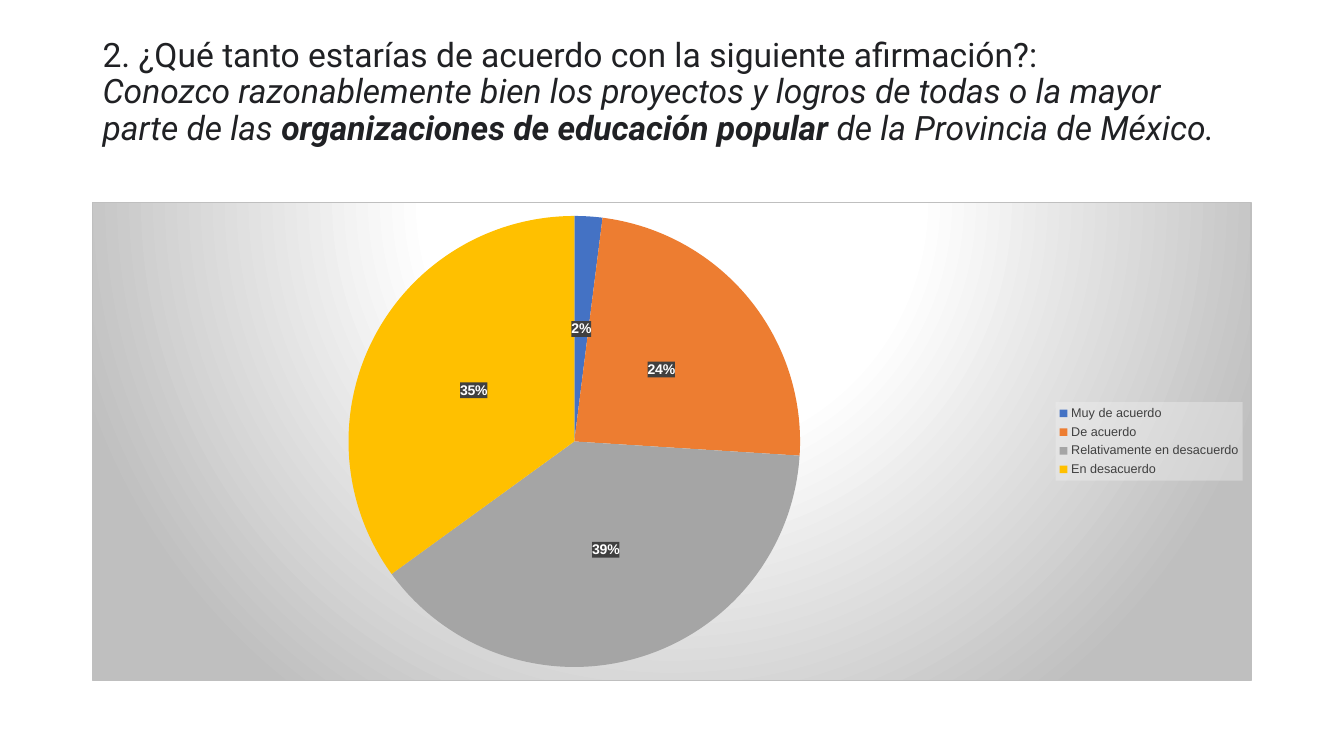
from copy import deepcopy

from lxml.etree import SubElement
from pptx import Presentation
from pptx.chart.data import CategoryChartData
from pptx.dml.color import RGBColor as Rgb
from pptx.enum.chart import XL_CHART_TYPE as ChartType
from pptx.enum.chart import XL_LABEL_POSITION as LabelPosition
from pptx.enum.chart import XL_LEGEND_POSITION as LegendPosition
from pptx.enum.text import MSO_ANCHOR as Anchor
from pptx.enum.text import PP_ALIGN as Align
from pptx.oxml import parse_xml
from pptx.oxml.ns import nsdecls, qn
from pptx.util import Cm, Pt

COLORS = {
    "title": "202124",
    "text": "000000",
    "legend": "404040",
    "legend_back": "F2F2F2",
    "label": "FFFFFF",
    "label_back": "404040",
    "center": "FFFFFF",
    "edge": "BFBFBF",
}
ANSWERS = {
    "Muy de acuerdo": (2, "4472C4"),
    "De acuerdo": (24, "ED7D31"),
    "Relativamente en desacuerdo": (39, "A5A5A5"),
    "En desacuerdo": (35, "FFC000"),
}
QUESTION = [
    ("2. ¿Qué tanto estarías de acuerdo con la siguiente afirmación?: ", {}, True),
    ("Conozco razonablemente bien los proyectos y logros de todas o la mayor "
     "parte de las ", {"italic": True}, False),
    ("organizaciones de educación popular", {"italic": True, "bold": True}, False),
    (" de la Provincia de México. ", {"italic": True}, True),
]


def apply(target, values):
    for name, value in values.items():
        setattr(target, name, value)


class SurveySlide:
    """Holds the style and the current slide, and adds its elements."""

    def __init__(self, deck):
        self.slide = deck.slides.add_slide(deck.slide_layouts[5])
        self.title_font = {"size": Pt(24), "name": "Roboto"}
        self.chart_font = {"size": Pt(10), "name": "Arial"}

    def style_font(self, font, color, values):
        apply(font, values)
        font.color.rgb = Rgb.from_string(COLORS[color])

    def add_question(self, parts, left, top, width, height):
        title = self.slide.shapes.title
        apply(title, {"left": left, "top": top, "width": width, "height": height})
        frame = title.text_frame
        apply(frame, {"word_wrap": True, "vertical_anchor": Anchor.MIDDLE})
        paragraph = frame.paragraphs[0]
        apply(paragraph, {"alignment": Align.LEFT, "line_spacing": 0.9})
        for text, emphasis, breaks in parts:
            run = paragraph.add_run()
            run.text = text
            self.style_font(run.font, "title", self.title_font | emphasis)
            if breaks:
                paragraph.add_line_break()
                paragraph._p[-1].append(deepcopy(run._r.rPr))
        SubElement(paragraph._p, qn("a:endParaRPr"), sz="2400")

    def set_background(self, element, fill, line="<a:ln><a:noFill/></a:ln>"):
        background = parse_xml(f'<c:spPr {nsdecls("c", "a")}>{fill}{line}</c:spPr>')
        element.find(qn("c:txPr")).addprevious(background)

    def solid(self, color, alpha):
        return (f'<a:solidFill><a:srgbClr val="{COLORS[color]}">'
                f'<a:alpha val="{alpha * 1000}"/></a:srgbClr></a:solidFill>')

    def radial(self):
        stops = "".join(
            f'<a:gs pos="{pos * 1000}"><a:srgbClr val="{COLORS[color]}"/></a:gs>'
            for pos, color in ((0, "center"), (39, "center"), (100, "edge")))
        return (f'<a:gradFill><a:gsLst>{stops}</a:gsLst><a:path path="circle">'
                '<a:fillToRect l="50000" t="-80000" r="50000" b="180000"/>'
                '</a:path></a:gradFill>')

    def add_pie(self, answers, left, top, width, height):
        data = CategoryChartData()
        data.categories = list(answers)
        data.add_series("Series 1", [value for value, _ in answers.values()])
        chart = self.slide.shapes.add_chart(
            ChartType.PIE, left, top, width, height, data).chart
        apply(chart, {"has_title": False, "has_legend": True})
        self.style_font(chart.font, "text", self.chart_font)
        border = f'<a:ln w="{Pt(0.75)}">{self.solid("edge", 100)}</a:ln>'
        self.set_background(chart._chartSpace, self.radial(), border)
        self.style_legend(chart.legend)
        plot = chart.plots[0]
        plot.vary_by_categories = True
        series = plot.series[0]
        for index, (_, color) in enumerate(answers.values()):
            slice_format = series.points[index].format
            slice_format.fill.solid()
            slice_format.fill.fore_color.rgb = Rgb.from_string(color)
            slice_format.line.fill.background()
        self.style_labels(series.data_labels)

    def style_legend(self, legend):
        apply(legend, {"position": LegendPosition.RIGHT, "include_in_layout": False})
        self.style_font(legend.font, "legend", self.chart_font | {"size": Pt(9)})
        self.set_background(legend._element, self.solid("legend_back", 39))

    def style_labels(self, labels):
        apply(labels, {"show_percentage": True, "show_value": False,
                       "number_format": "0%", "number_format_is_linked": False,
                       "position": LabelPosition.CENTER})
        self.style_font(labels.font, "label", self.chart_font | {"bold": True})
        self.set_background(labels._element, self.solid("label_back", 75))


def main():
    deck = Presentation()
    apply(deck, {"slide_width": Cm(33.87), "slide_height": Cm(19.05)})
    survey = SurveySlide(deck)
    left, width = Cm(2.33), Cm(29.21)
    survey.add_question(QUESTION, left, Cm(1.01), width, Cm(3.68))
    survey.add_pie(ANSWERS, left, Cm(5.08), width, Cm(12.09))
    deck.save("out.pptx")


if __name__ == "__main__":
    main()
